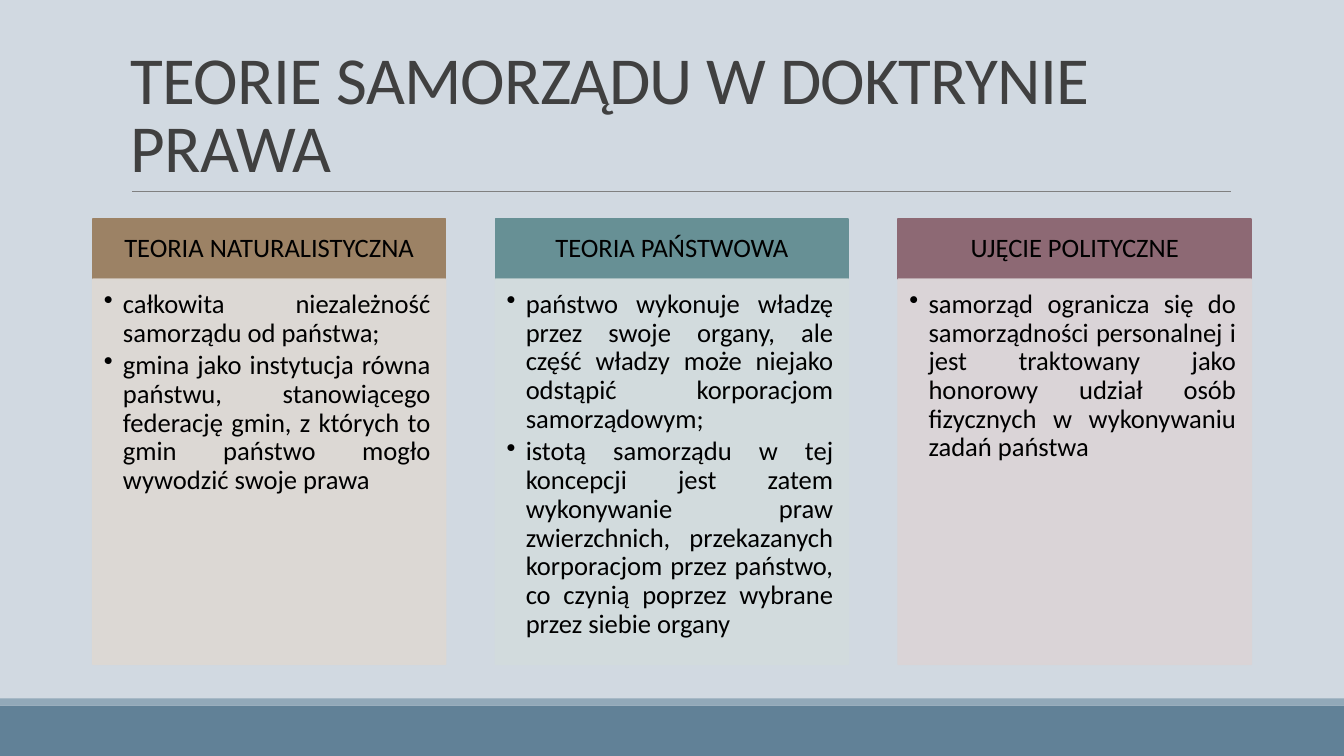
from lxml import etree
from pptx import Presentation
from pptx.dml.color import RGBColor
from pptx.enum.shapes import MSO_CONNECTOR, MSO_SHAPE
from pptx.enum.text import MSO_ANCHOR, PP_ALIGN
from pptx.oxml.ns import qn
from pptx.util import Inches, Pt

RECT = MSO_SHAPE.RECTANGLE
LINE = MSO_CONNECTOR.STRAIGHT
TOP, MIDDLE, BOTTOM = MSO_ANCHOR.TOP, MSO_ANCHOR.MIDDLE, MSO_ANCHOR.BOTTOM
LEFT, CENTER, JUSTIFY = PP_ALIGN.LEFT, PP_ALIGN.CENTER, PP_ALIGN.JUSTIFY

# Content
TITLE = "TEORIE SAMORZĄDU W DOKTRYNIE PRAWA"
THEORIES = [
    ("TEORIA NATURALISTYCZNA", "9C8265", "DED8D3", [
        "całkowita niezależność samorządu od państwa;",
        "gmina jako instytucja równa państwu, stanowiącego federację gmin, "
        "z których to gmin państwo mogło wywodzić swoje prawa",
    ]),
    ("TEORIA PAŃSTWOWA", "679095", "D3DCDD", [
        "państwo wykonuje władzę przez swoje organy, ale część władzy może "
        "niejako odstąpić korporacjom samorządowym;",
        "istotą samorządu w tej koncepcji jest zatem wykonywanie praw "
        "zwierzchnich, przekazanych korporacjom przez państwo, co czynią "
        "poprzez wybrane przez siebie organy",
    ]),
    ("UJĘCIE POLITYCZNE", "8D6974", "DBD4D6", [
        "samorząd ogranicza się do samorządności personalnej i jest "
        "traktowany jako honorowy udział osób fizycznych w wykonywaniu "
        "zadań państwa",
    ]),
]

# Theme
THEME = {
    "font": "Calibri", "title_size": 48, "text_size": 19,
    "bg": "D1D9E1", "footer": "618197", "stripe": "92A9B9",
    "rule": "808080", "title": "404040", "text": "000000",
}

# Grid, in inches
W, H = 13.33, 7.5
FOOTER_H, STRIPE_H = 0.5, 0.07
MARGIN, COL_W = 0.92, 3.5
PITCH = (W - 2 * MARGIN - COL_W) / (len(THEORIES) - 1)
HEAD_Y, HEAD_H, BODY_H = 2.17, 0.6, 3.82
TITLE_BOX = (1.2, 0.31, 11, 1.59)
RULE_X1, RULE_X2, RULE_Y = 1.31, 12.21, 1.9
INDENT = 0.19

# Text formats: spacing is a share of the line or points
TITLE_FMT = {"alignment": LEFT, "line_spacing": 0.85}
HEAD_FMT = {"alignment": CENTER, "line_spacing": 0.9}
BODY_FMT = {"alignment": JUSTIFY, "line_spacing": 0.9, "space_after": Pt(2.85)}


def rgb(name):
    return RGBColor.from_string(name)


def add_rect(box, color, line_width=0, alpha=None):
    sp = slide.shapes.add_shape(RECT, *map(Inches, box))
    sp.shadow.inherit = False
    fills = [sp.fill]
    if line_width:
        sp.line.width = Pt(line_width)
        fills.append(sp.line.fill)
    else:
        sp.line.fill.background()
    for fill in fills:
        fill.solid()
        fill.fore_color.rgb = rgb(color)
    if alpha:
        for clr in sp._element.spPr.iter(qn("a:srgbClr")):
            etree.SubElement(clr, qn("a:alpha"), val=str(alpha * 1000))
    return sp


def write(sp, texts, fmt, anchor, insets, size, color, bullets=False):
    tf = sp.text_frame
    tf.word_wrap = True
    tf.vertical_anchor = anchor
    for side, inset in zip(("left", "top", "right", "bottom"), insets):
        setattr(tf, f"margin_{side}", Inches(inset))
    for i, text in enumerate(texts):
        p = tf.add_paragraph() if i else tf.paragraphs[0]
        for name, value in fmt.items():
            setattr(p, name, value)
        if bullets:
            pPr = p._p.get_or_add_pPr()
            pPr.set("marL", str(Inches(INDENT)))
            pPr.set("indent", str(-Inches(INDENT)))
            etree.SubElement(pPr, qn("a:buChar"), char="•")
        r = p.add_run()
        r.text = text
        r.font.name = THEME["font"]
        r.font.size = Pt(size)
        r.font.color.rgb = rgb(color)
    return tf


prs = Presentation()
prs.slide_width, prs.slide_height = Inches(W), Inches(H)
slide = prs.slides.add_slide(prs.slide_layouts[6])
slide.background.fill.solid()
slide.background.fill.fore_color.rgb = rgb(THEME["bg"])

# Footer bands
add_rect((0, H - FOOTER_H, W, FOOTER_H), THEME["footer"])
add_rect((0, H - FOOTER_H - STRIPE_H, W, STRIPE_H), THEME["stripe"])

# Title and rule
rule = slide.shapes.add_connector(
    LINE, *map(Inches, (RULE_X1, RULE_Y, RULE_X2, RULE_Y)))
rule.line.color.rgb = rgb(THEME["rule"])
rule.line.width = Pt(0.5)
etree.SubElement(rule._element.spPr, qn("a:effectLst"))

title = slide.shapes.add_textbox(*map(Inches, TITLE_BOX))
tf = write(title, [TITLE], TITLE_FMT, BOTTOM, (0.1, 0.05, 0.1, 0.05),
           THEME["title_size"], THEME["title"])
tf.paragraphs[0].runs[0].font._element.set("spc", "-50")

# Theory columns
for i, (name, head_color, body_color, points) in enumerate(THEORIES):
    x = MARGIN + i * PITCH
    head = add_rect((x, HEAD_Y, COL_W, HEAD_H), head_color, 1.25)
    write(head, [name], HEAD_FMT, MIDDLE, (0.15, 0.08, 0.15, 0.08),
          THEME["text_size"], THEME["text"])
    body = add_rect((x, HEAD_Y + HEAD_H, COL_W, BODY_H), body_color, 1.25, 90)
    write(body, points, BODY_FMT, TOP, (0.11, 0.11, 0.15, 0.17),
          THEME["text_size"], THEME["text"], bullets=True)

prs.save("out.pptx")
